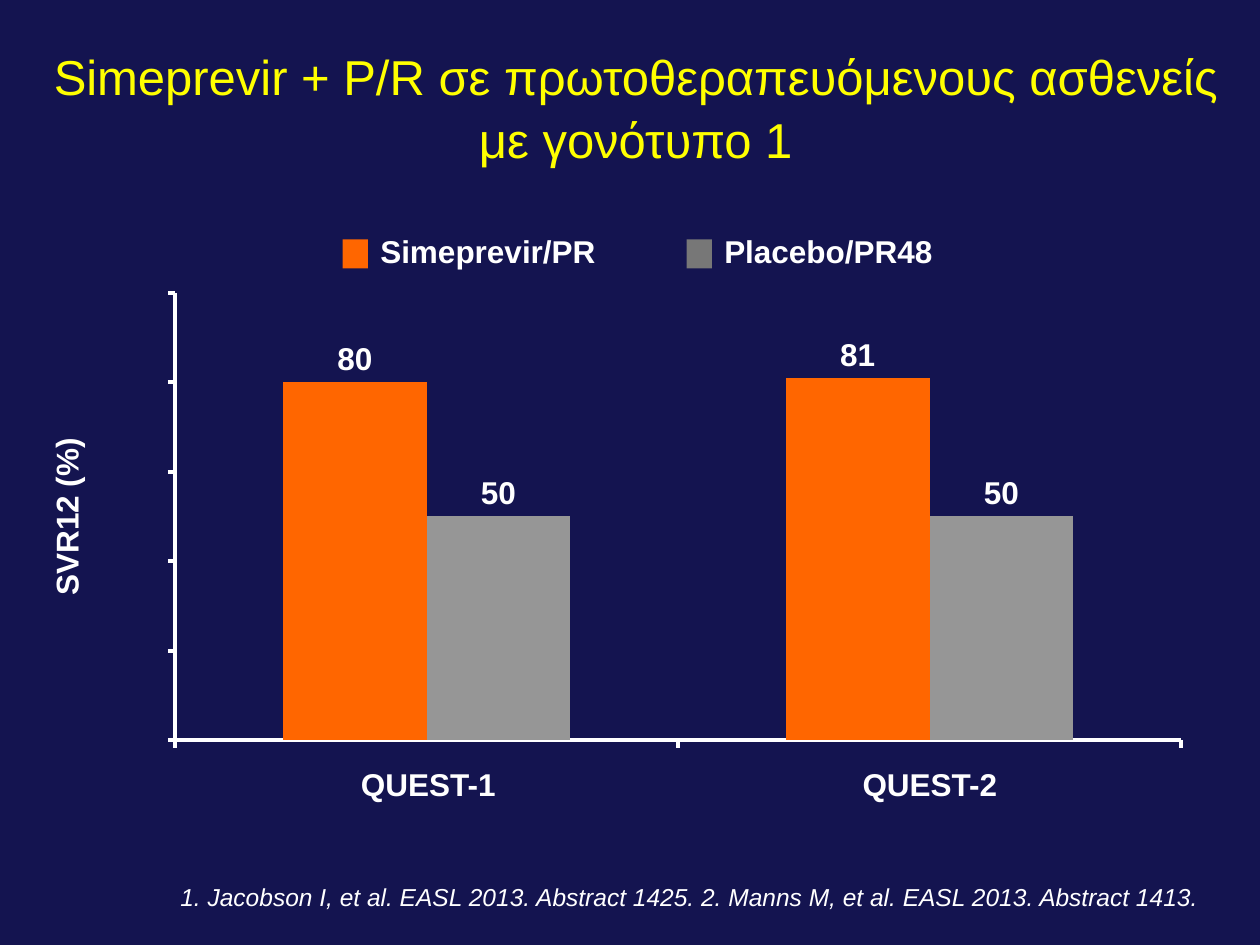
"""Build the SVR12 response slide with a clustered column chart."""
from lxml import etree
from pptx import Presentation
from pptx import util as u
from pptx.chart.data import CategoryChartData
from pptx.dml.color import RGBColor
from pptx.enum import chart as ch, shapes, text
from pptx.oxml import ns

COLOURS = {
    "background": "141450",
    "title": "FFFF00",
    "white": "FFFFFF",
    "simeprevir": "FF6600",
    "placebo": "969696",
    "placebo_key": "777777",
}
FONT = "Arial"


def colour(name):
    return RGBColor.from_string(COLOURS[name])


def add_text(words, left, top, width, height, size=18, ink="white", bold=False,
             italic=False, align=text.PP_ALIGN.LEFT, anchor=text.MSO_ANCHOR.TOP,
             spacing=None, margin=None, rotation=0):
    box = slide.shapes.add_textbox(u.Inches(left), u.Inches(top), u.Inches(width), u.Inches(height))
    box.rotation = rotation
    frame = box.text_frame
    frame.word_wrap = True
    frame.vertical_anchor = anchor
    if margin is not None:
        frame.margin_left = frame.margin_right = u.Inches(margin)
        frame.margin_top = frame.margin_bottom = u.Inches(margin)
    paragraph = frame.paragraphs[0]
    paragraph.alignment = align
    if spacing:
        paragraph.line_spacing = u.Pt(spacing)
    run = paragraph.add_run()
    run.text = words
    run.font.name = FONT
    run.font.size = u.Pt(size)
    run.font.bold = bold
    run.font.italic = italic
    run.font.color.rgb = colour(ink)


prs = Presentation()
prs.slide_width, prs.slide_height = u.Inches(10), u.Inches(7.5)
slide = prs.slides.add_slide(prs.slide_layouts[6])
slide.background.fill.solid()
slide.background.fill.fore_color.rgb = colour("background")

add_text("Simeprevir + P/R σε πρωτοθεραπευόμενους ασθενείς με γονότυπο 1",
         0.25, 0.17, 9.59, 1.33, size=28, ink="title", spacing=36, margin=0,
         align=text.PP_ALIGN.CENTER, anchor=text.MSO_ANCHOR.MIDDLE)
add_text("1. Jacobson I, et al. EASL 2013. Abstract 1425. 2. Manns M, et al. EASL 2013. Abstract 1413. ",
         0.35, 6.9, 9.32, 0.43, size=14, italic=True,
         align=text.PP_ALIGN.RIGHT, anchor=text.MSO_ANCHOR.MIDDLE)

response = CategoryChartData()
response.categories = ["1", "2"]
response.add_series("Series 1", [80, 81])
response.add_series("Series 2", [50, 50])
chart = slide.shapes.add_chart(ch.XL_CHART_TYPE.COLUMN_CLUSTERED, u.Inches(0.77), u.Inches(2.09),
                               u.Inches(8.87), u.Inches(4.1), response).chart
chart.has_legend = False
chart.has_title = False
chart.font.name = FONT
chart.font.size = u.Pt(18)
chart.font.color.rgb = colour("white")

for axis in (chart.category_axis, chart.value_axis):
    axis.has_major_gridlines = False
    axis.major_tick_mark = ch.XL_TICK_MARK.OUTSIDE
    axis.minor_tick_mark = ch.XL_TICK_MARK.NONE
    axis.tick_label_position = ch.XL_TICK_LABEL_POSITION.NONE
    axis.format.line.color.rgb = colour("white")
    axis.format.line.width = u.Pt(2.25)
chart.value_axis.minimum_scale = 0
chart.value_axis.maximum_scale = 100
chart.value_axis.major_unit = 20

columns = chart.plots[0]
columns.gap_width = 150
columns.overlap = 0
columns.vary_by_categories = False
for series, arm in zip(columns.series, ("simeprevir", "placebo")):
    series.format.fill.solid()
    series.format.fill.fore_color.rgb = colour(arm)
    labels = series.data_labels
    labels.show_value = True
    labels.position = ch.XL_LABEL_POSITION.OUTSIDE_END
    labels.font.name = FONT
    labels.font.size = u.Pt(18)
    labels.font.bold = True
    labels.font.color.rgb = colour("white")

plot_area = chart.element.find(".//" + ns.qn("c:plotArea"))
for old_layout in plot_area.findall(ns.qn("c:layout")):
    plot_area.remove(old_layout)
layout = etree.Element(ns.qn("c:layout"))
manual = etree.SubElement(layout, ns.qn("c:manualLayout"))
for tag, value in (("layoutTarget", "inner"), ("xMode", "edge"), ("yMode", "edge"),
                   ("x", "0.07"), ("y", "0.057"), ("w", "0.9"), ("h", "0.866")):
    etree.SubElement(manual, ns.qn("c:" + tag)).set("val", value)
plot_area.insert(0, layout)

for trial, left in (("QUEST-1", 2.46), ("QUEST-2", 6.44)):
    add_text(trial, left, 6.02, 1.88, 0.4, bold=True, align=text.PP_ALIGN.CENTER)
add_text("SVR12 (%)", -0.33, 3.77, 1.71, 0.4, bold=True, rotation=270)

for arm, left, ink in (("Simeprevir/PR", 2.72, "simeprevir"), ("Placebo/PR48", 5.45, "placebo_key")):
    key = slide.shapes.add_shape(shapes.MSO_SHAPE.RECTANGLE, u.Inches(left), u.Inches(1.9),
                                 u.Inches(0.2), u.Inches(0.23))
    key.shadow.inherit = False
    key.fill.solid()
    key.fill.fore_color.rgb = colour(ink)
    key.line.fill.background()
    add_text(arm, left + 0.2, 1.79, 1.94, 0.4, bold=True)

prs.save("out.pptx")
